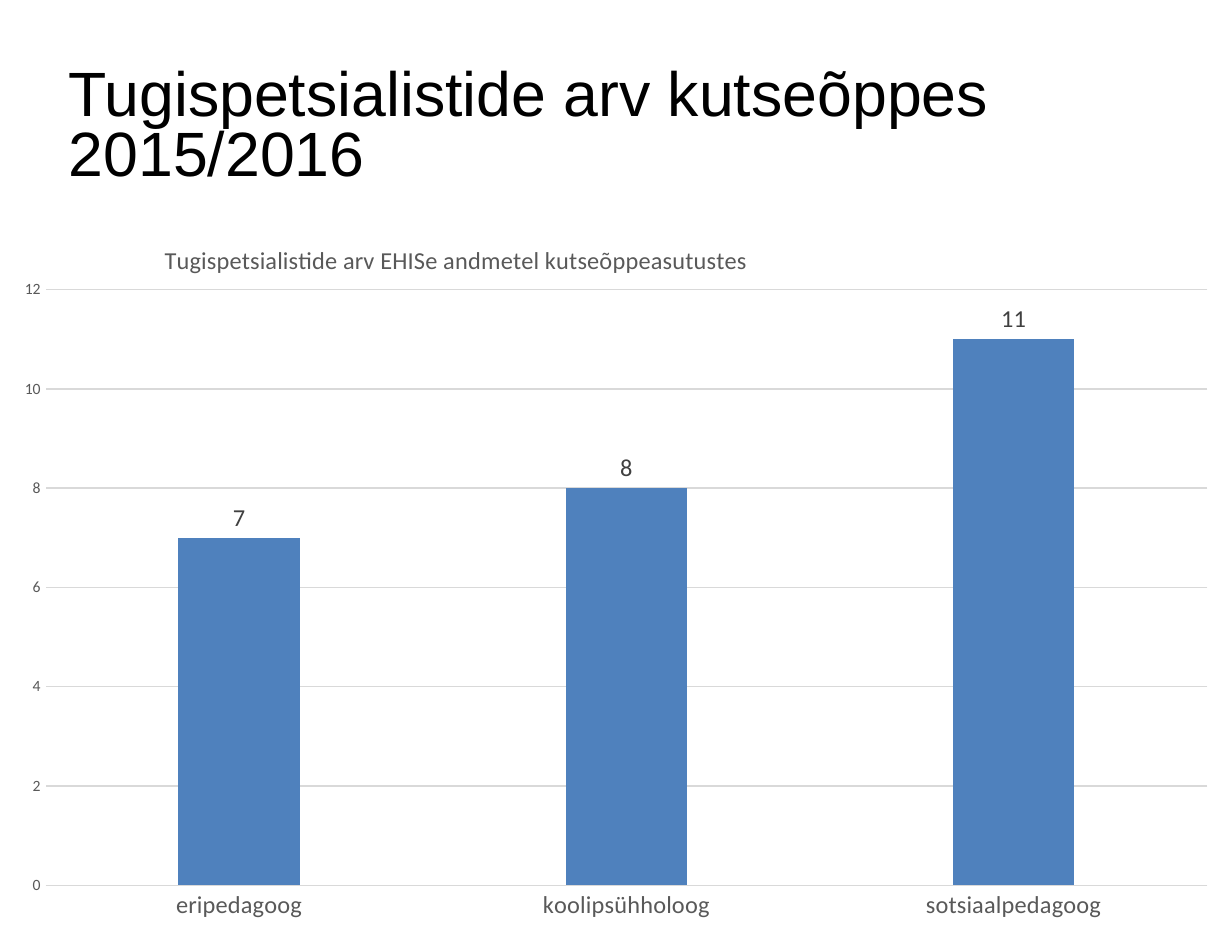
from dataclasses import dataclass

from lxml import etree
from pptx import Presentation
from pptx.chart.data import CategoryChartData
from pptx.dml.color import RGBColor
from pptx.enum.chart import XL_CHART_TYPE, XL_LABEL_POSITION, XL_TICK_MARK
from pptx.enum.text import MSO_ANCHOR, MSO_AUTO_SIZE, PP_ALIGN
from pptx.oxml.ns import qn
from pptx.util import Pt

COLUMNS = XL_CHART_TYPE.COLUMN_CLUSTERED
OUTSIDE_END = XL_LABEL_POSITION.OUTSIDE_END
NO_TICK = XL_TICK_MARK.NONE
MIDDLE = MSO_ANCHOR.MIDDLE
NO_AUTOFIT = MSO_AUTO_SIZE.NONE
LEFT = PP_ALIGN.LEFT

COLORS = {
    "title": "000000",
    "axis": "595959",
    "label": "404040",
    "grid": "D9D9D9",
    "bar": "4F81BD",
}
SLIDE_W, SLIDE_H = 708.5, 538.5
CHART_TOP = 116
NUMBER_FORMAT = "###0"


@dataclass
class TextStyle:
    size: float
    color: str
    name: str = "Calibri"


@dataclass
class Specialist:
    role: str
    count: int


SPECIALISTS = [
    Specialist("eripedagoog", 7),
    Specialist("koolipsühholoog", 8),
    Specialist("sotsiaalpedagoog", 11),
]


def rgb(key: str) -> RGBColor:
    return RGBColor.from_string(COLORS[key])


def style_font(font, style: TextStyle) -> None:
    font.name = style.name
    font.size = Pt(style.size)
    font.bold = False
    font.color.rgb = rgb(style.color)


def style_line(line) -> None:
    line.color.rgb = rgb("grid")
    line.width = Pt(0.75)


def set_layout(parent, after: str, **places: float) -> None:
    """Place a chart part by hand, in fractions of the chart's size."""
    for old in parent.findall(qn("c:layout")):
        parent.remove(old)
    layout = etree.Element(qn("c:layout"))
    manual = etree.SubElement(layout, qn("c:manualLayout"))
    if "w" in places:
        etree.SubElement(manual, qn("c:layoutTarget")).set("val", "inner")
    for key in ("x", "y"):
        etree.SubElement(manual, qn(f"c:{key}Mode")).set("val", "edge")
    for key, value in places.items():
        etree.SubElement(manual, qn(f"c:{key}")).set("val", str(value))
    previous = parent.find(qn(after)) if after else None
    parent.insert(0 if previous is None else parent.index(previous) + 1, layout)


def add_title(s, text: str) -> None:
    title = s.shapes.title
    title.left, title.top, title.width, title.height = Pt(39.5), Pt(24), Pt(592.5), Pt(99.5)
    tf = title.text_frame
    tf.text = text
    tf.word_wrap = True
    tf.auto_size = NO_AUTOFIT
    tf.vertical_anchor = MIDDLE
    tf.margin_left = tf.margin_right = tf.margin_top = tf.margin_bottom = 0
    p = tf.paragraphs[0]
    p.alignment = LEFT
    p.line_spacing = 0.8
    style_font(p.runs[0].font, TextStyle(36, "title", "Arial"))


def add_specialist_chart(s, heading: str) -> None:
    data = CategoryChartData(number_format=NUMBER_FORMAT)
    data.categories = [item.role for item in SPECIALISTS]
    data.add_series("Series 1", [item.count for item in SPECIALISTS])
    chart = s.shapes.add_chart(
        COLUMNS, 0, Pt(CHART_TOP), Pt(SLIDE_W), Pt(SLIDE_H - CHART_TOP), data
    ).chart
    style_font(chart.font, TextStyle(10, "title"))
    chart.has_legend = False

    chart.has_title = True
    tf = chart.chart_title.text_frame
    tf.text = heading
    style_font(tf.paragraphs[0].runs[0].font, TextStyle(14, "axis"))
    chart.chart_title.include_in_layout = False
    chart_title = chart.chart_title._element
    set_layout(chart_title, "c:tx", x=0.13, y=0.05)

    plot = chart.plots[0]
    plot.gap_width = 219
    plot.overlap = -27
    plot.vary_by_categories = False
    set_layout(plot._element.getparent(), "", x=0.037, y=0.12, w=0.943, h=0.811)
    bars = plot.series[0].format.fill
    bars.solid()
    bars.fore_color.rgb = rgb("bar")

    plot.has_data_labels = True
    labels = plot.data_labels
    labels.show_value = True
    labels.position = OUTSIDE_END
    labels.number_format = NUMBER_FORMAT
    labels.number_format_is_linked = False
    style_font(labels.font, TextStyle(14, "label"))

    for axis, size in ((chart.category_axis, 14), (chart.value_axis, 9)):
        axis.major_tick_mark = axis.minor_tick_mark = NO_TICK
        style_font(axis.tick_labels.font, TextStyle(size, "axis"))
    style_line(chart.category_axis.format.line)

    counts = chart.value_axis
    counts.minimum_scale, counts.maximum_scale, counts.major_unit = 0, 12, 2
    counts.format.line.fill.background()
    counts.has_major_gridlines = True
    style_line(counts.major_gridlines.format.line)
    counts.tick_labels.number_format = NUMBER_FORMAT
    counts.tick_labels.number_format_is_linked = False


def main() -> None:
    prs = Presentation()
    prs.slide_width, prs.slide_height = Pt(SLIDE_W), Pt(SLIDE_H)
    s = prs.slides.add_slide(prs.slide_layouts[5])
    add_title(s, "Tugispetsialistide arv kutseõppes 2015/2016")
    add_specialist_chart(s, "Tugispetsialistide arv EHISe andmetel kutseõppeasutustes")
    prs.save("out.pptx")


if __name__ == "__main__":
    main()
